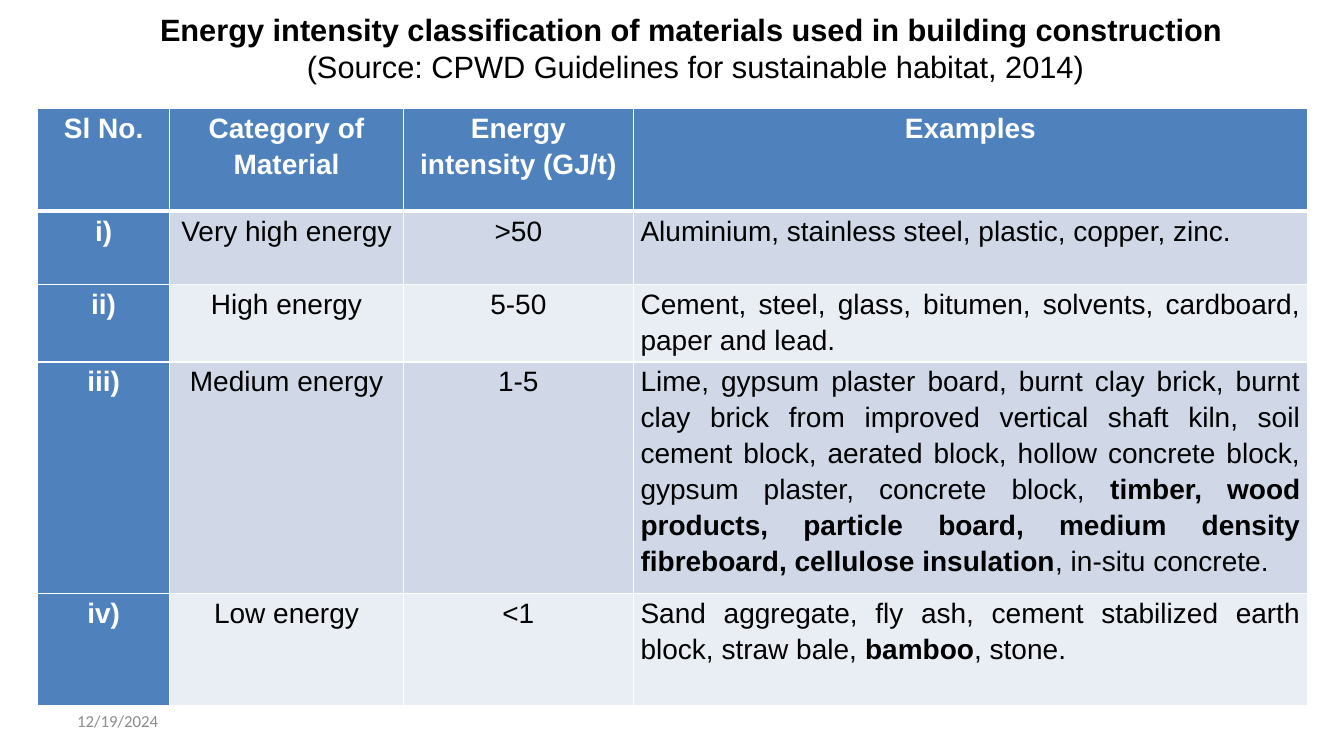
from lxml.etree import SubElement
from pptx import Presentation
from pptx.dml.color import RGBColor
from pptx.enum.text import MSO_ANCHOR, PP_ALIGN
from pptx.oxml.ns import qn
from pptx.util import Pt

HEADER_BLUE = "4F81BD"
BAND_FILLS = ["D0D8E8", "E9EDF4"]
COLUMN_WIDTHS = [94.3, 167, 164.2, 481.7]
ROW_HEIGHTS = [73.4, 52.6, 52.6, 139.7, 79.9]

# Each cell lists its spans; in the body, every second span is bold.
ROWS = [
    [["Sl No."], ["Category of Material"], ["Energy intensity (GJ/t)"], ["Examples"]],
    [["i)"], ["Very high energy"], [">50"],
     ["Aluminium, stainless steel, plastic, copper, zinc."]],
    [["ii)"], ["High energy"], ["5-50"],
     ["Cement, steel, glass, bitumen, solvents, cardboard, paper and lead."]],
    [["iii)"], ["Medium energy"], ["1-5"],
     ["Lime, gypsum plaster board, burnt clay brick, burnt clay brick from improved "
      "vertical shaft kiln, soil cement block, aerated block, hollow concrete block, "
      "gypsum plaster, concrete block, ",
      "timber, wood products, particle board, medium density fibreboard, "
      "cellulose insulation",
      ", in-situ concrete."]],
    [["iv)"], ["Low energy"], ["<1"],
     ["Sand aggregate, fly ash, cement stabilized earth block, straw bale, ",
      "bamboo", ", stone."]],
]


def style(font, size, color, bold=False, name="Arial"):
    font.name = name
    font.size = Pt(size)
    font.bold = bold
    font.color.rgb = RGBColor.from_string(color)


def add_white_borders(cell, bottom_width):
    properties = cell._tc.get_or_add_tcPr()
    widths = {"a:lnL": 1, "a:lnR": 1, "a:lnT": 1, "a:lnB": bottom_width}
    for position, (side, width) in enumerate(widths.items()):
        line = SubElement(properties, qn(side), w=str(Pt(width)))
        fill = SubElement(line, qn("a:solidFill"))
        SubElement(fill, qn("a:srgbClr"), val="FFFFFF")
        properties.insert(position, line)


deck = Presentation()
deck.slide_width, deck.slide_height = Pt(960), Pt(540)
page = deck.slides.add_slide(deck.slide_layouts[6])

# Date
date_box = page.shapes.add_textbox(Pt(48), Pt(500.4), Pt(224), Pt(28.8))
date_box.text_frame.word_wrap = True
date_box.text_frame.vertical_anchor = MSO_ANCHOR.MIDDLE
date_box.text_frame.text = "12/19/2024"
style(date_box.text_frame.paragraphs[0].runs[0].font, 12, "8C8C8C", name="Calibri")

# Classification table
table = page.shapes.add_table(
    len(ROWS), len(COLUMN_WIDTHS), Pt(26.9), Pt(77.3),
    Pt(sum(COLUMN_WIDTHS)), Pt(sum(ROW_HEIGHTS))).table
for column, width in zip(table.columns, COLUMN_WIDTHS):
    column.width = Pt(width)
for row, height in zip(table.rows, ROW_HEIGHTS):
    row.height = Pt(height)

for row_index, row in enumerate(ROWS):
    for column_index, spans in enumerate(row):
        cell = table.cell(row_index, column_index)
        is_header = row_index == 0
        is_heading = is_header or column_index == 0
        is_example = column_index == 3 and not is_header
        cell.margin_left = cell.margin_right = Pt(5.2)
        cell.margin_top = cell.margin_bottom = 0
        cell.fill.solid()
        cell.fill.fore_color.rgb = RGBColor.from_string(
            HEADER_BLUE if is_heading else BAND_FILLS[(row_index - 1) % 2])
        add_white_borders(cell, 3 if is_header else 1)

        para = cell.text_frame.paragraphs[0]
        para.alignment = PP_ALIGN.JUSTIFY if is_example else PP_ALIGN.CENTER
        para.line_spacing = 1.15
        para.space_after = Pt(0 if is_header else 6)
        for span_index, text in enumerate(spans):
            span = para.add_run()
            span.text = text
            style(span.font, 20, "FFFFFF" if is_heading else "000000",
                  bold=is_heading or span_index % 2 == 1)

# Title and source
title_box = page.shapes.add_textbox(Pt(88.6), Pt(3.6), Pt(816.5), Pt(60.5))
title_box.text_frame.word_wrap = True
title_box.text_frame.vertical_anchor = MSO_ANCHOR.MIDDLE
title_box.text_frame.text = (
    "Energy intensity classification of materials used in building construction \n"
    "(Source: CPWD Guidelines for sustainable habitat, 2014)")
for para, bold in zip(title_box.text_frame.paragraphs, [True, False]):
    para.alignment = PP_ALIGN.CENTER
    style(para.runs[0].font, 22, "000000", bold)

deck.save("out.pptx")
